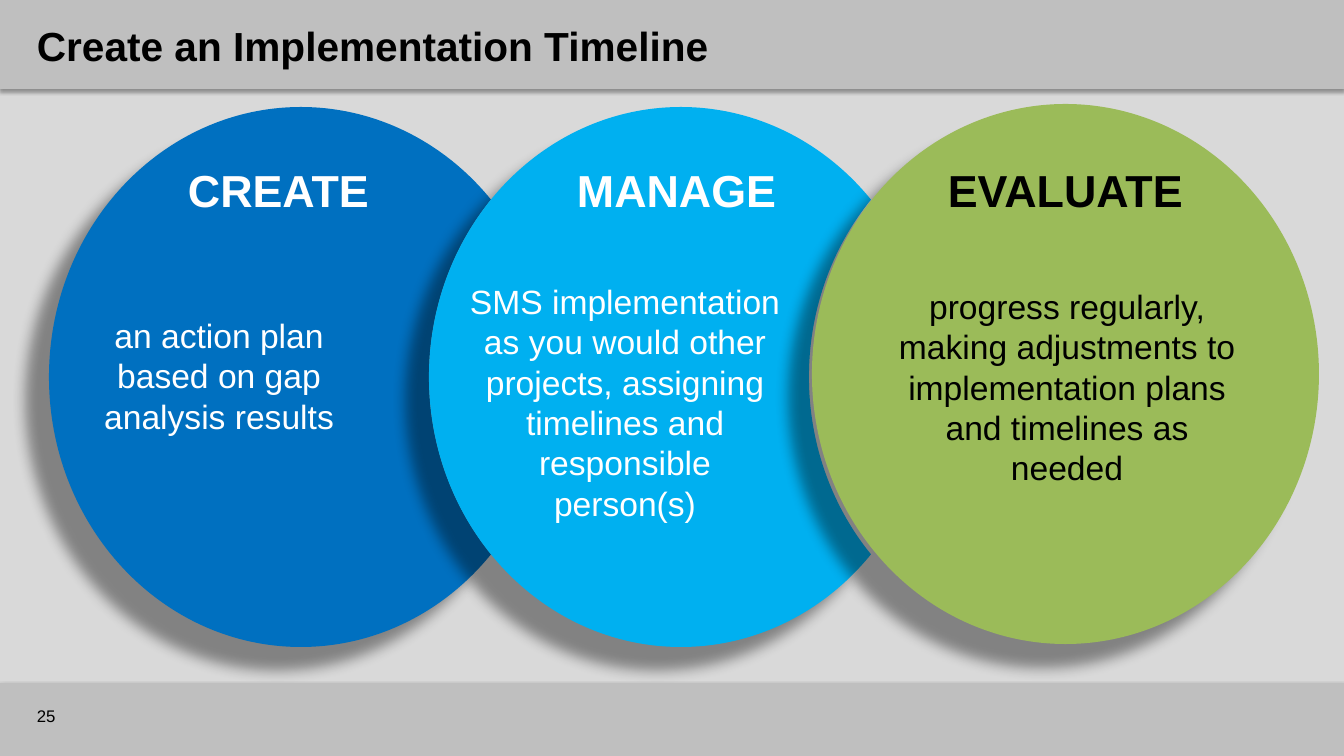
from math import acos, cos, pi, sin, tan

from lxml import etree
from pptx import Presentation
from pptx.dml.color import RGBColor
from pptx.enum.shapes import MSO_SHAPE
from pptx.enum.text import MSO_ANCHOR, PP_ALIGN
from pptx.oxml.ns import qn
from pptx.util import Emu, Pt

RECTANGLE, OVAL = MSO_SHAPE.RECTANGLE, MSO_SHAPE.OVAL
TOP, MIDDLE = MSO_ANCHOR.TOP, MSO_ANCHOR.MIDDLE
LEFT, CENTER = PP_ALIGN.LEFT, PP_ALIGN.CENTER

BACKGROUND = RGBColor(0xD9, 0xD9, 0xD9)
BAND = RGBColor(0xBF, 0xBF, 0xBF)
BLUE = RGBColor(0x00, 0x70, 0xC0)
CYAN = RGBColor(0x00, 0xB0, 0xF0)
GREEN = RGBColor(0x9B, 0xBB, 0x59)
WHITE = RGBColor(0xFF, 0xFF, 0xFF)
BLACK = RGBColor(0x00, 0x00, 0x00)

FONT = "Arial"
SLIDE_WIDTH, SLIDE_HEIGHT = 1344, 756
PX = 12192000 / SLIDE_WIDTH
CIRCLE_PITCH = 380

# Shadows: opacity %, blur pt, distance pt, direction in degrees
BAND_SHADOW = (35, 3.1, 1.8, 90)
CIRCLE_SHADOW = (40, 10, 24, 135)


def px(length):
    return Emu(round(length * PX))


def paint(shape, color, shadow):
    """Fill a shape, drop its outline and give it an outer shadow."""
    shape.fill.solid()
    shape.fill.fore_color.rgb = color
    shape.line.fill.background()
    shape.shadow.inherit = False
    opacity, blur, distance, direction = shadow
    effects = shape._element.spPr.find(qn("a:effectLst"))
    outer = etree.SubElement(
        effects, qn("a:outerShdw"), blurRad=str(Pt(blur)), dist=str(Pt(distance)),
        dir=str(direction * 60000), algn="ctr", rotWithShape="0")
    tint = etree.SubElement(outer, qn("a:srgbClr"), val=str(BLACK))
    etree.SubElement(tint, qn("a:alpha"), val=str(opacity * 1000))


def add_text(page, box, text, size, color, bold=False, align=LEFT,
             anchor=TOP, spacing=None):
    label = page.shapes.add_textbox(*map(px, box))
    frame = label.text_frame
    frame.word_wrap = True
    frame.vertical_anchor = anchor
    frame.text = text
    para = frame.paragraphs[0]
    para.alignment = align
    para.line_spacing = spacing
    span = para.runs[0]
    span.font.name = FONT
    span.font.size = Pt(size)
    span.font.bold = bold
    span.font.color.rgb = color


def add_band(page, box, text, text_box, size, bold=False):
    """A grey bar across the page; text_box is relative to the bar."""
    left, top = box[:2]
    bar = page.shapes.add_shape(RECTANGLE, *map(px, box))
    paint(bar, BAND, BAND_SHADOW)
    x, y, w, h = text_box
    add_text(page, (left + x, top + y, w, h), text, size, BLACK, bold, anchor=MIDDLE)


def add_crescent(page, box):
    """An ellipse with a bite taken by an equal ellipse one pitch to the right."""
    left, top, width, height = box
    radius_x, radius_y = width / 2, height / 2
    tip = acos(CIRCLE_PITCH / width)

    def curves(middle_x, angles):
        """Bezier segments, each two handles and an end, relative to the box."""
        for start, end in zip(angles, angles[1:]):
            pull = 4 / 3 * tan((end - start) / 4)
            unit = [(cos(start) - pull * sin(start), sin(start) + pull * cos(start)),
                    (cos(end) + pull * sin(end), sin(end) - pull * cos(end)),
                    (cos(end), sin(end))]
            yield [(px(middle_x + radius_x * x), px(radius_y + radius_y * y))
                   for x, y in unit]

    outer = [tip, pi / 2, pi, 3 * pi / 2, 2 * pi - tip]
    inner = [pi + tip, pi, pi - tip]
    segments = [*curves(radius_x, outer), *curves(radius_x + CIRCLE_PITCH, inner)]
    corners = [segment[-1] for segment in segments]
    builder = page.shapes.build_freeform(*corners[-1], scale=1.0)
    builder.add_line_segments(corners, close=True)
    crescent = builder.convert_to_shape(px(left), px(top))

    # Bend the straight sides into arcs
    sides = list(crescent._element.iter(qn("a:lnTo")))
    for side, segment in zip(sides, segments):
        bend = etree.Element(qn("a:cubicBezTo"))
        for x, y in segment:
            etree.SubElement(bend, qn("a:pt"), x=str(x), y=str(y))
        side.getparent().replace(side, bend)
    return crescent


def add_stage(page, box, color, text_color, heading, heading_box, body, body_box,
              whole=False):
    """One stage of the timeline; text boxes are relative to the stage box."""
    left, top = box[:2]
    if whole:
        disc = page.shapes.add_shape(OVAL, *map(px, box))
    else:
        disc = add_crescent(page, box)
    paint(disc, color, CIRCLE_SHADOW)
    x, y, w, h = heading_box
    add_text(page, (left + x, top + y, w, h), heading, 32, text_color, True, spacing=0.9)
    x, y, w, h = body_box
    add_text(page, (left + x, top + y, w, h), body, 24, text_color, align=CENTER)


def main():
    deck = Presentation()
    deck.slide_width, deck.slide_height = px(SLIDE_WIDTH), px(SLIDE_HEIGHT)
    page = deck.slides.add_slide(deck.slide_layouts[6])
    page.background.fill.solid()
    page.background.fill.fore_color.rgb = BACKGROUND

    # Footer and title bands
    add_band(page, (0, 683, SLIDE_WIDTH, 73), "25", (27, 13, 101, 40), 12)
    add_band(page, (0, 0, SLIDE_WIDTH, 89), "Create an Implementation Timeline",
             (27, 14, 1303, 63), 29, bold=True)

    # Three overlapping stages
    first_left = 49
    add_stage(page, (first_left, 107, 504, 540), BLUE, WHITE,
              "CREATE", (129, 57, 296, 57),
              "an action plan based on gap analysis results", (10, 203, 320, 132))
    add_stage(page, (first_left + CIRCLE_PITCH, 107, 504, 540), CYAN, WHITE,
              "MANAGE", (138, 57, 296, 57),
              "SMS implementation as you would other projects, assigning "
              "timelines and responsible person(s)", (26, 169, 340, 254))
    add_stage(page, (812, 104, 507, 540), GREEN, BLACK,
              "EVALUATE", (126, 60, 275, 57),
              "progress regularly, making adjustments to implementation plans "
              "and timelines as needed", (71, 177, 368, 214), whole=True)

    deck.save("out.pptx")


if __name__ == "__main__":
    main()
